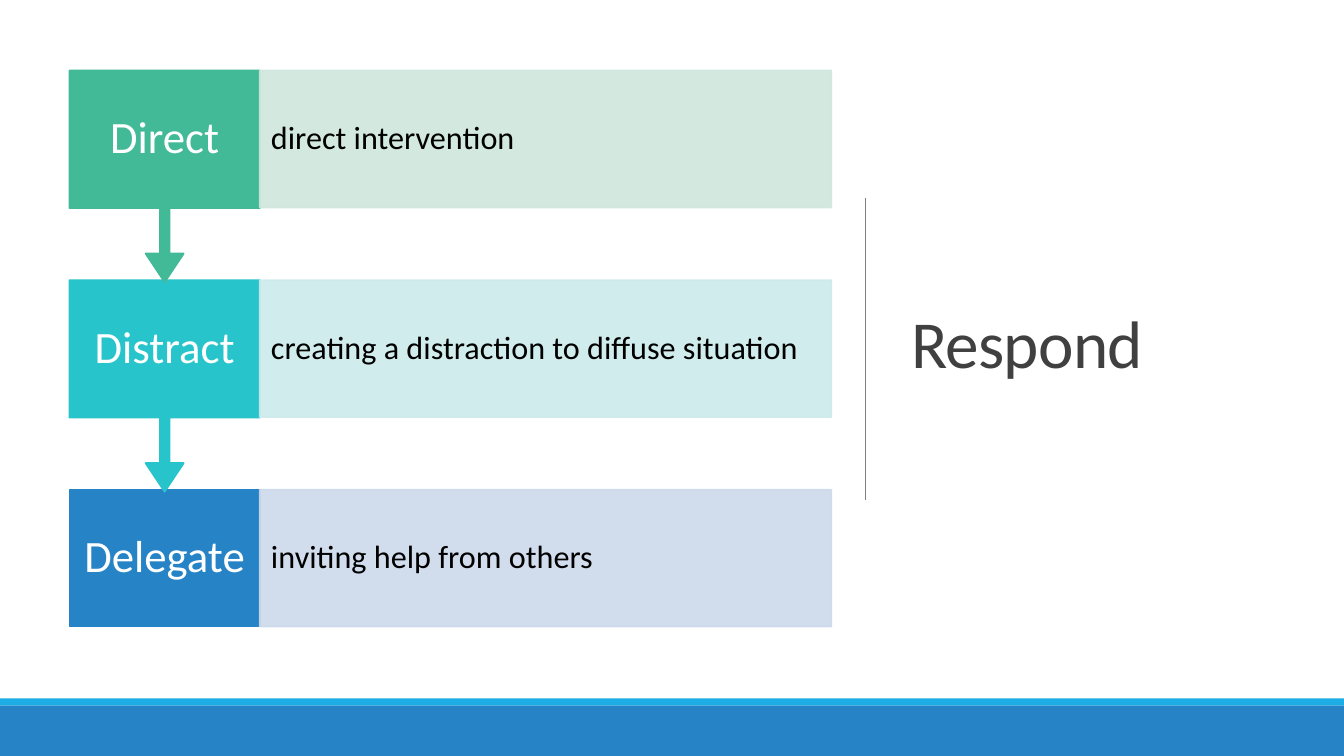
from lxml.etree import SubElement
from pptx import Presentation
from pptx.dml.color import RGBColor
from pptx.enum.shapes import MSO_CONNECTOR as Link, MSO_SHAPE as Kind
from pptx.enum.text import MSO_ANCHOR as Anchor, PP_ALIGN as Align
from pptx.oxml.ns import qn
from pptx.util import Cm, Pt

WHITE = RGBColor(0xFF, 0xFF, 0xFF)
BLACK = RGBColor(0x00, 0x00, 0x00)
DARK = RGBColor(0x40, 0x40, 0x40)
GREY = RGBColor(0x80, 0x80, 0x80)
SKY = RGBColor(0x1C, 0xAD, 0xE4)
BLUE = RGBColor(0x26, 0x83, 0xC6)
TEAL = RGBColor(0x28, 0xC4, 0xCC)
GREEN = RGBColor(0x42, 0xBA, 0x97)
PALE_BLUE = RGBColor(0xCD, 0xD9, 0xEA)
PALE_TEAL = RGBColor(0xCD, 0xEA, 0xEC)
PALE_GREEN = RGBColor(0xCF, 0xE7, 0xDD)

TITLE = "Respond"
STEPS = [
    ("Direct", "direct intervention", GREEN, PALE_GREEN),
    ("Distract", "creating a distraction to diffuse situation", TEAL, PALE_TEAL),
    ("Delegate", "inviting help from others", BLUE, PALE_BLUE),
]
ARROW = (0.05, 0.1, 0.15, 0.65)

WIDE, HIGH = 33.87, 19.05
LEFT, TOP = 1.75, 1.78
LABEL_W, NOTE_W = 4.8, 14.4
ROW_H, PITCH, ARROW_H = 3.45, 5.28, 5.33


def add_box(kind, x, y, w, h, fill, edge=True):
    box = slide.shapes.add_shape(kind, Cm(x), Cm(y), Cm(w), Cm(h))
    box.shadow.inherit = False
    box.fill.solid()
    box.fill.fore_color.rgb = fill
    if edge:
        box.line.color.rgb = fill
        box.line.width = Pt(1.25)
    else:
        box.line.fill.background()
    return box


def write(box, text, size, color, align=Align.LEFT, pad=(0.25, 0.13), lead=0.9):
    """Set one middle-anchored paragraph; pad is (side, top and bottom) in cm."""
    frame = box.text_frame
    frame.word_wrap = True
    frame.vertical_anchor = Anchor.MIDDLE
    frame.margin_left = frame.margin_right = Cm(pad[0])
    frame.margin_top = frame.margin_bottom = Cm(pad[1])
    para = frame.paragraphs[0]
    para.text = text
    para.alignment = align
    para.line_spacing = lead
    font = para.runs[0].font
    font.name, font.size = "Calibri", Pt(size)
    font.color.rgb = color


def soften(box):
    """Make fill and line 90% opaque."""
    for tint in box.element.spPr.iter(qn("a:srgbClr")):
        SubElement(tint, qn("a:alpha"), val="90000")


def add_step(row, label, note, color, pale):
    y = TOP + row * PITCH
    last = row == len(STEPS) - 1
    kind = Kind.RECTANGLE if last else Kind.DOWN_ARROW_CALLOUT
    box = add_box(kind, LEFT, y, LABEL_W, ROW_H if last else ARROW_H, color)
    if not last:
        for i, value in enumerate(ARROW):
            box.adjustments[i] = value
    write(box, label, 32, WHITE, Align.CENTER, (0.33, 0.64))

    panel = add_box(Kind.RECTANGLE, LEFT + LABEL_W, y, NOTE_W, ROW_H, pale)
    soften(panel)
    write(panel, note, 23, BLACK, pad=(0.28, 0.81))


deck = Presentation()
deck.slide_width, deck.slide_height = Cm(WIDE), Cm(HIGH)
slide = deck.slides.add_slide(deck.slide_layouts[6])

title = slide.shapes.add_textbox(Cm(22.71), Cm(1.75), Cm(9.37), Cm(14.05))
write(title, TITLE, 48, DARK, lead=0.85)
for props in title.element.iter(qn("a:rPr")):
    props.set("spc", "-50")

rule = slide.shapes.add_connector(
    Link.STRAIGHT, Cm(21.82), Cm(4.98), Cm(21.82), Cm(12.6))
rule.line.color.rgb = GREY
rule.line.width = Pt(0.5)
SubElement(rule.element.spPr, qn("a:effectLst"))

add_box(Kind.RECTANGLE, 0, 17.6, WIDE, 0.18, SKY, edge=False)
add_box(Kind.RECTANGLE, 0, 17.78, WIDE, 1.27, BLUE, edge=False)

# From the bottom up, so each arrow tip lies over the next box.
for row, step in reversed(list(enumerate(STEPS))):
    add_step(row, *step)

deck.save("out.pptx")
